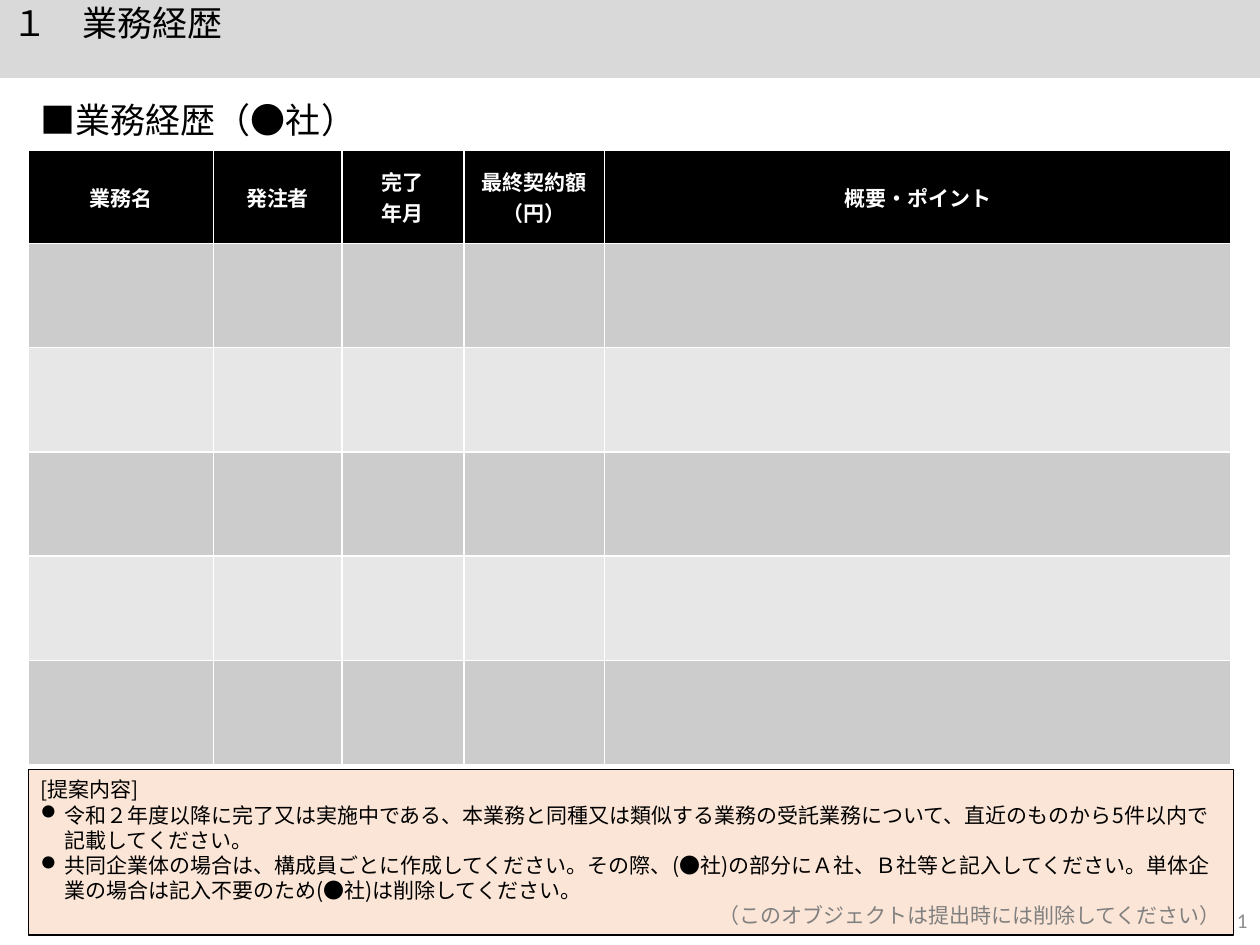
import pptx
import pptx.util
import pptx.dml.color
import pptx.enum.text
import pptx.enum.shapes
import pptx.oxml.ns
import lxml.etree

Cm = pptx.util.Cm
Pt = pptx.util.Pt
Align = pptx.enum.text.PP_ALIGN
Anchor = pptx.enum.text.MSO_ANCHOR
Fit = pptx.enum.text.MSO_AUTO_SIZE
qn = pptx.oxml.ns.qn

SANS = "Noto Sans CJK JP"
COLORS = {
    "black": "000000",
    "white": "FFFFFF",
    "band": "D9D9D9",
    "dark": "CCCCCC",
    "light": "E7E7E7",
    "peach": "FBE5D6",
    "gray": "808080",
    "page": "8C8C8C",
}
HEADS = ["業務名", "発注者", "完了\n年月", "最終契約額（円）", "概要・ポイント"]
WIDTHS = [3.73, 2.59, 2.46, 2.84, 12.62]
HEAD_H, ROW_H, ROWS = 1.88, 2.1, 5
NOTES = [
    "令和２年度以降に完了又は実施中である、本業務と同種又は類似する業務の受託業務について、直近のものから5件以内で記載してください。",
    "共同企業体の場合は、構成員ごとに作成してください。その際、(●社)の部分にＡ社、Ｂ社等と記入してください。単体企業の場合は記入不要のため(●社)は削除してください。",
]


def color(name):
    return pptx.dml.color.RGBColor.from_string(COLORS[name])


def paint(item, name):
    item.fill.solid()
    item.fill.fore_color.rgb = color(name)


def style(para, size, name="black", align=Align.LEFT, bold=False, face=SANS):
    para.alignment = align
    font = para.font
    font.size = Pt(size)
    font.bold = bold
    font.color.rgb = color(name)
    font.name = face
    props = para._p.get_or_add_pPr().get_or_add_defRPr()
    lxml.etree.SubElement(props, qn("a:ea")).set("typeface", face)


def bullet(para):
    props = para._p.get_or_add_pPr()
    props.set("marL", str(Cm(0.48)))
    props.set("indent", str(Cm(-0.48)))
    lxml.etree.SubElement(props, qn("a:buFont")).set("typeface", "Wingdings")
    lxml.etree.SubElement(props, qn("a:buChar")).set("char", "l")


def place(shape, left, top, width, height):
    shape.left, shape.top = Cm(left), Cm(top)
    shape.width, shape.height = Cm(width), Cm(height)


def heading(shape, text):
    frame = shape.text_frame
    frame.text = text
    frame.word_wrap = True
    frame.auto_size = Fit.SHAPE_TO_FIT_TEXT
    frame.vertical_anchor = Anchor.MIDDLE
    para = frame.paragraphs[0]
    para.line_spacing = 0.9
    para.space_before = Pt(7.5)
    style(para, 20)


def add_title(slide):
    title = slide.shapes.title
    place(title, 0, 0, 25.4, 1.02)
    paint(title, "band")
    heading(title, "１\u3000業務経歴".replace("\u3000", "　"))


def add_page(slide):
    box = slide.shapes.add_textbox(Cm(19.69), Cm(18.03), Cm(5.71), Cm(1.02))
    frame = box.text_frame
    frame.text = "1"
    frame.word_wrap = True
    frame.vertical_anchor = Anchor.MIDDLE
    style(frame.paragraphs[0], 12, "page", Align.RIGHT, face="Calibri")


def add_grid(slide):
    height = HEAD_H + ROWS * ROW_H
    grid = slide.shapes.add_table(
        ROWS + 1, len(HEADS), Cm(0.57), Cm(3.03), Cm(sum(WIDTHS)), Cm(height)
    ).table
    for col, width in zip(grid.columns, WIDTHS):
        col.width = Cm(width)
    for i, row in enumerate(grid.rows):
        row.height = Cm(ROW_H if i else HEAD_H)
        fill = ("dark" if i % 2 else "light") if i else "black"
        for cell in row.cells:
            paint(cell, fill)
    for cell, text in zip(grid.rows[0].cells, HEADS):
        cell.text = text
        cell.vertical_anchor = Anchor.MIDDLE
        for para in cell.text_frame.paragraphs:
            style(para, 12, "white", Align.CENTER, True)


def add_note(slide):
    box = slide.shapes.add_shape(
        pptx.enum.shapes.MSO_SHAPE.RECTANGLE, Cm(0.57), Cm(15.52), Cm(24.3), Cm(3.33)
    )
    box.shadow.inherit = False
    paint(box, "peach")
    box.line.color.rgb = color("black")
    box.line.width = Pt(0.75)
    frame = box.text_frame
    frame.word_wrap = True
    frame.auto_size = Fit.SHAPE_TO_FIT_TEXT
    frame.vertical_anchor = Anchor.MIDDLE
    frame.text = "\n".join(["[提案内容]", *NOTES, "（このオブジェクトは提出時には削除してください）"])
    first, *items, last = frame.paragraphs
    style(first, 12)
    for para in items:
        bullet(para)
        style(para, 12)
    style(last, 12, "gray", Align.RIGHT)


def main():
    deck = pptx.Presentation()
    deck.slide_width, deck.slide_height = Cm(25.4), Cm(19.05)
    slide = deck.slides.add_slide(deck.slide_layouts[5])
    add_title(slide)
    add_page(slide)
    add_grid(slide)
    box = slide.shapes.add_textbox(Cm(0.57), Cm(1.96), Cm(7.77), Cm(1.02))
    heading(box, "■業務経歴（●社）")
    add_note(slide)
    deck.save("out.pptx")


if __name__ == "__main__":
    main()
